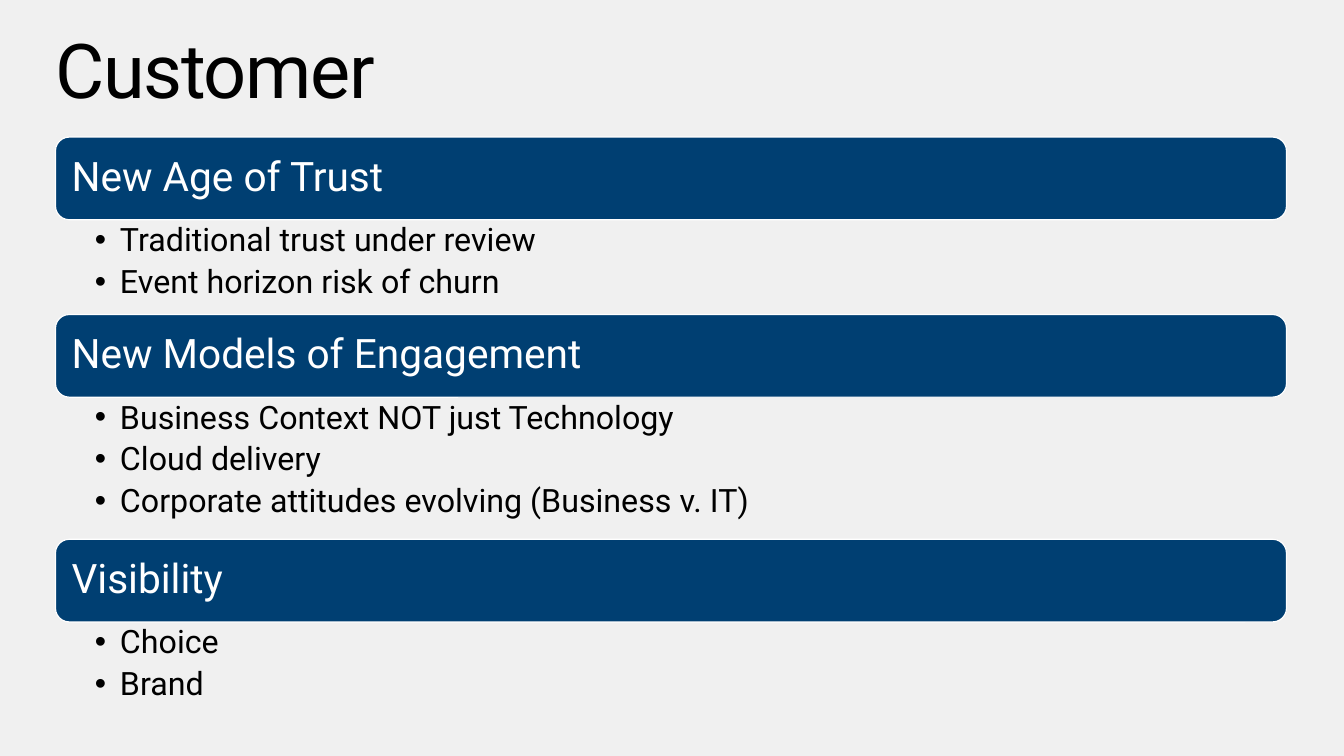
from lxml.etree import SubElement
from pptx import Presentation
from pptx.dml.color import RGBColor
from pptx.enum.shapes import MSO_SHAPE
from pptx.enum.text import MSO_ANCHOR, MSO_AUTO_SIZE, PP_ALIGN
from pptx.oxml.ns import qn
from pptx.util import Inches, Pt

COLORS = {"back": "F0F0F0", "bar": "003F72", "light": "FFFFFF", "dark": "000000"}
LEFT, WIDTH, TOP = 0.55, 12.21, 1.36
BAR, ROW = 0.82, 0.47  # bar height, list height per bullet

TOPICS = [
    ("New Age of Trust",
     ["Traditional trust under review", "Event horizon risk of churn"]),
    ("New Models of Engagement",
     ["Business Context NOT just Technology", "Cloud delivery",
      "Corporate attitudes evolving (Business v. IT)"]),
    ("Visibility", ["Choice", "Brand"]),
]


def color(name):
    return RGBColor.from_string(COLORS[name])


def assign(target, values):
    for name, value in values.items():
        setattr(target, name, value)


class Deck:
    face = "Roboto"

    def __init__(self):
        self.show = Presentation()
        assign(self.show, {"slide_width": Inches(13.33), "slide_height": Inches(7.5)})
        # The Comparison layout offers a title and several body placeholders
        self.slide = self.show.slides.add_slide(self.show.slide_layouts[4])
        fill = self.slide.background.fill
        fill.solid()
        fill.fore_color.rgb = color("back")
        self.bodies = list(self.slide.placeholders)[1:]

    def place(self, shape, left, top, width, height):
        box = {"left": left, "top": top, "width": width, "height": height}
        assign(shape, {side: Inches(size) for side, size in box.items()})

    def label(self, shape, lines, size, tone, insets, anchor=MSO_ANCHOR.TOP, after=0):
        frame = shape.text_frame
        frame.text = "\n".join(lines)
        sides = ("margin_left", "margin_top", "margin_right", "margin_bottom")
        assign(frame, {side: Inches(inset) for side, inset in zip(sides, insets)})
        assign(frame, {"word_wrap": True, "auto_size": MSO_AUTO_SIZE.NONE,
                       "vertical_anchor": anchor})
        for para in frame.paragraphs:
            assign(para, {"alignment": PP_ALIGN.LEFT, "line_spacing": 0.9,
                          "space_before": Pt(0), "space_after": Pt(after)})
            font = para.runs[0].font
            assign(font, {"name": self.face, "size": Pt(size), "bold": False})
            font.color.rgb = color(tone)
        return frame.paragraphs

    def title(self, text):
        shape = self.slide.shapes.title
        self.place(shape, LEFT, 0.33, 12.19, 0.82)
        para = self.label(shape, [text], 54, "dark", (0, 0, 0, 0))[0]
        para.runs[0].font._element.set("spc", "-100")

    def bar(self, text, top):
        shape = self.slide.shapes.add_shape(
            MSO_SHAPE.ROUNDED_RECTANGLE,
            Inches(LEFT), Inches(top), Inches(WIDTH), Inches(BAR))
        shape.shadow.inherit = False
        shape.fill.solid()
        shape.fill.fore_color.rgb = color("bar")
        shape.line.color.rgb = color("light")
        shape.line.width = Pt(0.85)
        self.label(shape, [text], 29, "light", (0.12,) * 4, MSO_ANCHOR.MIDDLE)

    def bullets(self, items, top):
        shape = self.bodies.pop(0)
        self.place(shape, LEFT, top, WIDTH, ROW * len(items))
        paras = self.label(shape, items, 23, "dark", (0.39, 0.04, 0.23, 0.04), after=5)
        for para in paras:
            para.level = 1
            props = para._p.get_or_add_pPr()
            props.set("marL", str(Inches(0.25)))
            props.set("indent", str(Inches(-0.25)))
            SubElement(props, qn("a:buFont")).set("typeface", "Arial")
            SubElement(props, qn("a:buChar")).set("char", "•")

    def save(self):
        # Drop the placeholders that hold no text
        for shape in self.bodies:
            shape._element.getparent().remove(shape._element)
        self.show.save("out.pptx")


def main():
    deck = Deck()
    deck.title("Customer")
    # Bars and their lists, stacked without gaps
    top = TOP
    for head, items in TOPICS:
        deck.bar(head, top)
        deck.bullets(items, top + BAR)
        top += BAR + ROW * len(items)
    deck.save()


if __name__ == "__main__":
    main()
